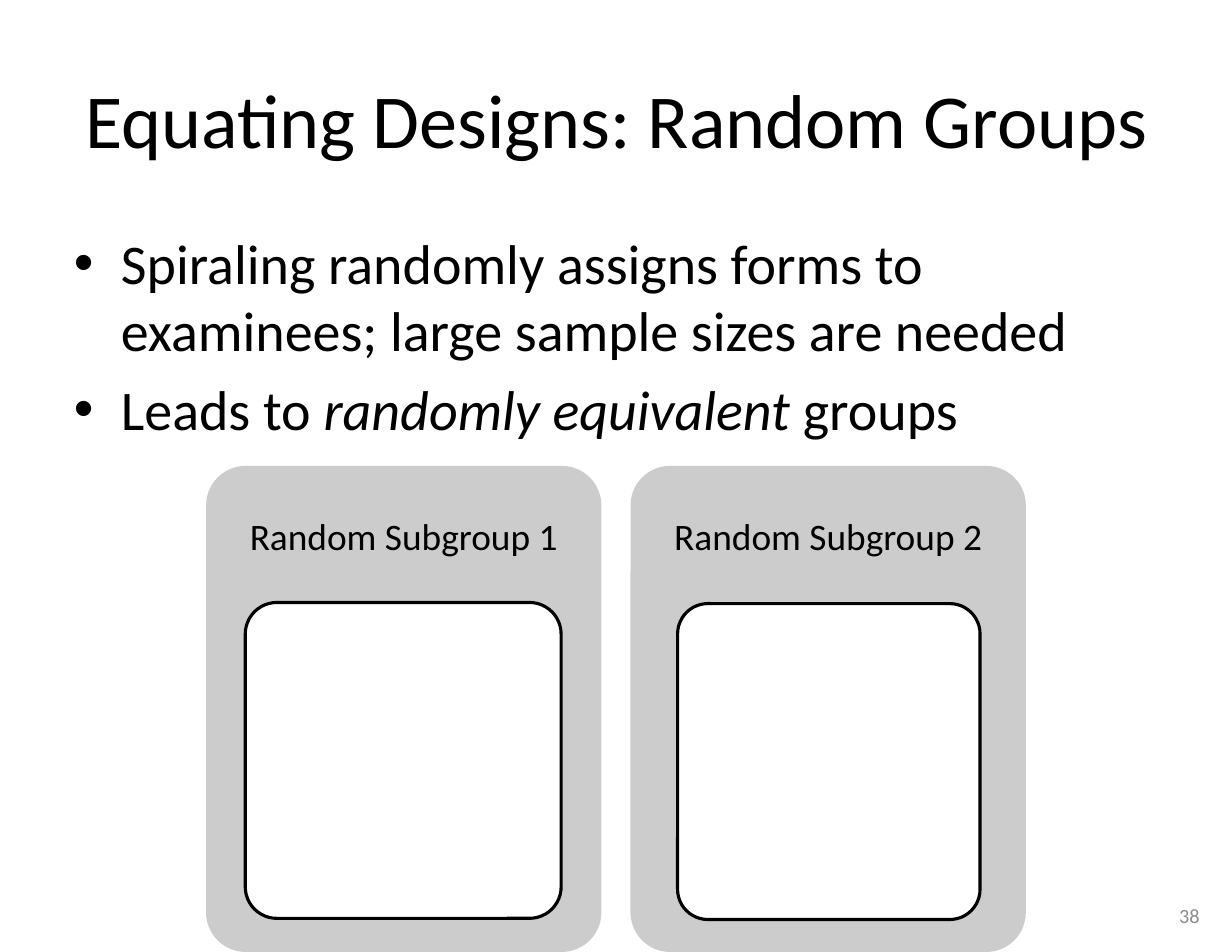
import pptx
import pptx.dml.color
import pptx.enum.shapes
import pptx.enum.text
import pptx.util
from lxml import etree

ALIGN = pptx.enum.text.PP_ALIGN
ANCHOR = pptx.enum.text.MSO_ANCHOR
ROUNDED = pptx.enum.shapes.MSO_SHAPE.ROUNDED_RECTANGLE


def color(value):
    return pptx.dml.color.RGBColor.from_string(value)


def set_attributes(target, values):
    for name, value in values.items():
        setattr(target, name, value)


class SlideBuilder:
    font_name = "Calibri"
    ink = "000000"
    grid = 100

    def __init__(self, presentation):
        self.width = presentation.slide_width
        self.height = presentation.slide_height
        self.slide = presentation.slides.add_slide(presentation.slide_layouts[6])

    def place(self, left, top, width, height):
        column, row = self.width / self.grid, self.height / self.grid
        return [round(length) for length in (left * column, top * row, width * column, height * row)]

    def add_text(self, box, paragraphs, size, ink=None, anchor=ANCHOR.MIDDLE,
                 inset=(0.11, 0.06), bullet=False, **paragraph_format):
        frame = self.slide.shapes.add_textbox(*self.place(*box)).text_frame
        horizontal, vertical = map(pptx.util.Inches, inset)
        set_attributes(frame, {
            "word_wrap": True, "vertical_anchor": anchor,
            "margin_left": horizontal, "margin_right": horizontal,
            "margin_top": vertical, "margin_bottom": vertical,
        })
        for index, runs in enumerate(paragraphs):
            paragraph = frame.add_paragraph() if index else frame.paragraphs[0]
            set_attributes(paragraph, paragraph_format)
            for text, italic in runs:
                run = paragraph.add_run()
                run.text = text
                set_attributes(run.font, {
                    "name": self.font_name, "size": pptx.util.Pt(size), "italic": italic,
                })
                run.font.color.rgb = color(ink or self.ink)
            if bullet:
                self.add_bullet(paragraph)

    def add_bullet(self, paragraph):
        properties = paragraph._p.get_or_add_pPr()
        indent = pptx.util.Inches(0.42)
        properties.set("marL", str(indent))
        properties.set("indent", str(-indent))
        namespace = etree.QName(properties).namespace
        etree.SubElement(properties, f"{{{namespace}}}buFont", typeface="Arial")
        etree.SubElement(properties, f"{{{namespace}}}buChar", char="•")

    def add_card(self, box, fill, line=None):
        shape = self.slide.shapes.add_shape(ROUNDED, *self.place(*box))
        shape.adjustments[0] = 0.1
        shape.shadow.inherit = False
        shape.fill.solid()
        shape.fill.fore_color.rgb = color(fill)
        if line:
            shape.line.color.rgb = color(line)
            shape.line.width = pptx.util.Pt(2)
        else:
            shape.line.fill.background()

    def add_subgroup(self, number, left, form_left, form_top, form_width):
        top, width = 48.94, 32.09
        self.add_card((left, top, width, self.grid - top), "CCCCCC")
        self.add_text((left, top, width, 15.29), [[(f"Random Subgroup {number}", False)]], 24,
                      inset=(0.1, 0.1), alignment=ALIGN.CENTER, line_spacing=0.9)
        self.add_card((form_left, form_top, form_width, 33.18), "FFFFFF", self.ink)


def main():
    presentation = pptx.Presentation()
    set_attributes(presentation, {
        "slide_width": pptx.util.Inches(11), "slide_height": pptx.util.Inches(8.5),
    })
    builder = SlideBuilder(presentation)
    builder.add_text((5, 4, 90, 16.7), [[("Equating Designs: Random Groups", False)]], 49,
                     alignment=ALIGN.CENTER)
    points = [
        [("Spiraling randomly assigns forms to examinees; large sample sizes are needed", False)],
        [("Leads to ", False), ("randomly equivalent", True), (" groups", False)],
    ]
    builder.add_text((5, 23.3, 90, 26.7), points, 36, anchor=ANCHOR.TOP, bullet=True,
                     space_before=pptx.util.Pt(7.2))
    subgroups = [(16.73, 19.91, 63.29, 25.64), (51.18, 55, 63.41, 24.55)]
    for number, places in enumerate(subgroups, 1):
        builder.add_subgroup(number, *places)
    builder.add_text((75, 93.53, 23.36, 5.29), [[("38", False)]], 13, "8C8C8C",
                     alignment=ALIGN.RIGHT)
    presentation.save("out.pptx")


if __name__ == "__main__":
    main()
